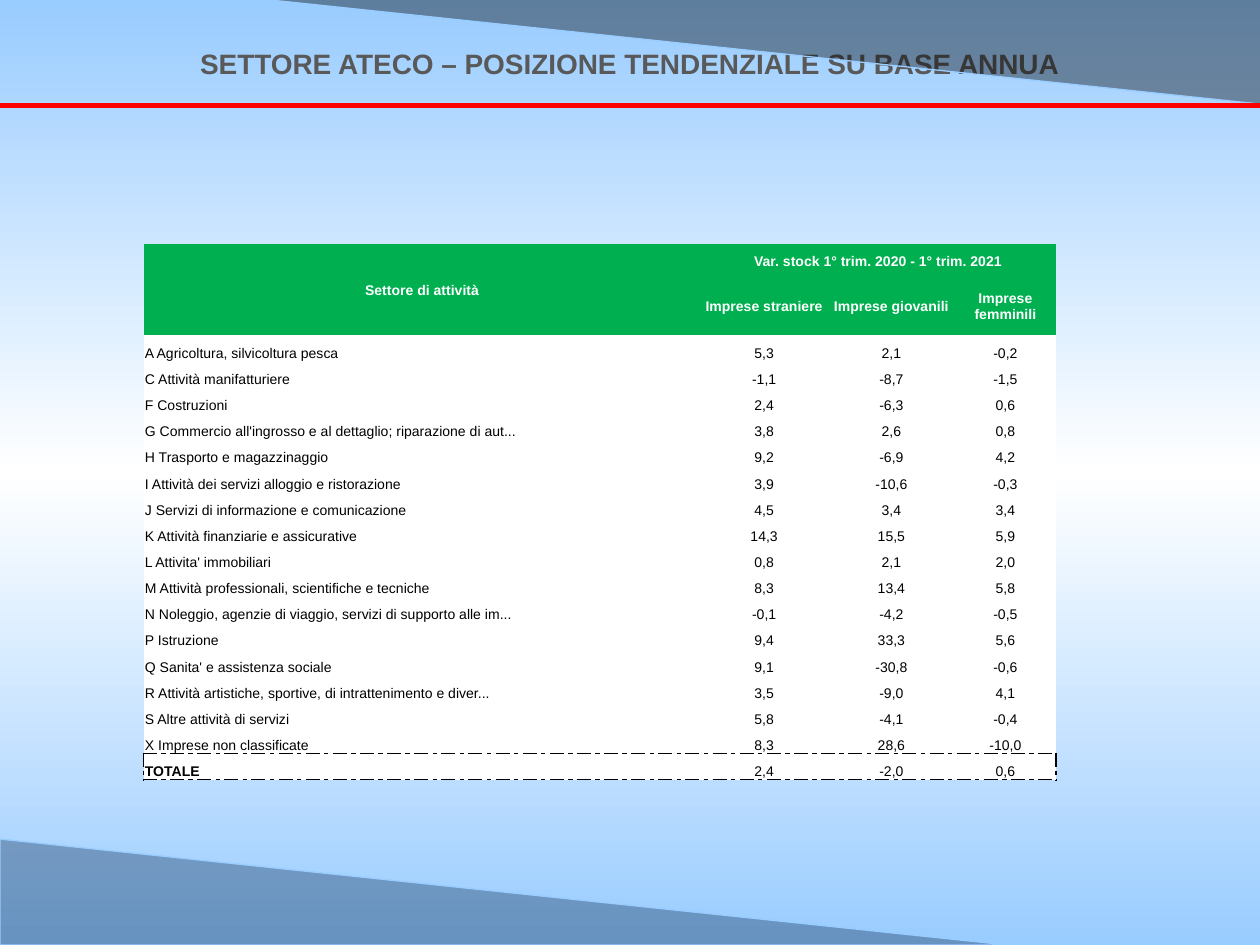
from copy import deepcopy

from lxml.etree import SubElement
from pptx import Presentation
from pptx.dml.color import RGBColor
from pptx.enum.shapes import MSO_CONNECTOR, MSO_SHAPE
from pptx.enum.text import MSO_ANCHOR, PP_ALIGN
from pptx.oxml.ns import qn
from pptx.util import Inches, Pt

COLORS = {
    "sky": "99CCFF", "white": "FFFFFF", "black": "000000", "navy": "17375E",
    "title": "595959", "rule": "FF0000", "header": "00B050",
}
FONT = "Arial"
NO_TABLE_STYLE = "{2D5ABB26-0587-4C30-8999-92F81FD0307C}"
COLUMN_WIDTHS = [4.42, 1.01, 1.01, 0.8]
HEADER_HEIGHTS = [0.26, 0.46]
TABLE_HEIGHT = 4.25
HEADERS = [
    ["Settore di attività", "Var. stock 1° trim. 2020 - 1° trim. 2021", "", ""],
    ["", "Imprese straniere", "Imprese giovanili", "Imprese femminili"],
]
SECTORS = [
    ["A Agricoltura, silvicoltura pesca", "5,3", "2,1", "-0,2"],
    ["C Attività manifatturiere", "-1,1", "-8,7", "-1,5"],
    ["F Costruzioni", "2,4", "-6,3", "0,6"],
    ["G Commercio all'ingrosso e al dettaglio; riparazione di aut...", "3,8", "2,6", "0,8"],
    ["H Trasporto e magazzinaggio", "9,2", "-6,9", "4,2"],
    ["I Attività dei servizi alloggio e ristorazione", "3,9", "-10,6", "-0,3"],
    ["J Servizi di informazione e comunicazione", "4,5", "3,4", "3,4"],
    ["K Attività finanziarie e assicurative", "14,3", "15,5", "5,9"],
    ["L Attivita' immobiliari", "0,8", "2,1", "2,0"],
    ["M Attività professionali, scientifiche e tecniche", "8,3", "13,4", "5,8"],
    ["N Noleggio, agenzie di viaggio, servizi di supporto alle im...", "-0,1", "-4,2", "-0,5"],
    ["P Istruzione", "9,4", "33,3", "5,6"],
    ["Q Sanita' e assistenza sociale", "9,1", "-30,8", "-0,6"],
    ["R Attività artistiche, sportive, di intrattenimento e diver...", "3,5", "-9,0", "4,1"],
    ["S Altre attività di servizi", "5,8", "-4,1", "-0,4"],
    ["X Imprese non classificate", "8,3", "28,6", "-10,0"],
    ["TOTALE", "2,4", "-2,0", "0,6"],
]


def color(name):
    return RGBColor.from_string(COLORS[name])


class SlideBuilder:
    def __init__(self, slide):
        self.slide = slide

    def background(self, names):
        """Vertical gradient with evenly spaced stops."""
        fill = self.slide.background.fill
        fill.gradient()
        fill.gradient_angle = 270
        stop_list = next(self.slide.element.iter(qn("a:gsLst")))
        for _ in names[2:]:
            stop_list.insert(1, deepcopy(stop_list[0]))
        for index, (stop, name) in enumerate(zip(fill.gradient_stops, names)):
            stop.color.rgb = color(name)
            stop.position = index / (len(names) - 1)

    def format_text(self, frame, size, name, bold, alignment):
        paragraph = frame.paragraphs[0]
        paragraph.alignment = alignment
        font = paragraph.font
        font.name, font.size, font.bold = FONT, Pt(size), bold
        font.color.rgb = color(name)

    def title(self, text, left, top, width, height):
        title = self.slide.shapes.title
        title.left, title.top = Inches(left), Inches(top)
        title.width, title.height = Inches(width), Inches(height)
        title.text_frame.text = text
        title.text_frame.vertical_anchor = MSO_ANCHOR.MIDDLE
        self.format_text(title.text_frame, 16, "title", True, PP_ALIGN.CENTER)

    def corner(self, left, top, name, rotation=0):
        """Translucent right triangle in a corner of the slide."""
        shape = self.slide.shapes.add_shape(
            MSO_SHAPE.RIGHT_TRIANGLE, Inches(left), Inches(top), Inches(7.99), Inches(0.84))
        shape.rotation = rotation
        shape.shadow.inherit = False
        shape.fill.solid()
        shape.fill.fore_color.rgb = color(name)
        fill_color = next(shape.element.spPr.iter(qn("a:srgbClr")))
        SubElement(fill_color, qn("a:alpha"), val="38000")
        shape.line.color.rgb = color("sky")
        shape.line.width = Pt(0.75)

    def rule(self, top):
        line = self.slide.shapes.add_connector(
            MSO_CONNECTOR.STRAIGHT, 0, Inches(top), Inches(10), Inches(top))
        line.line.color.rgb = color("rule")
        line.line.width = Pt(3)
        SubElement(line.element.spPr, qn("a:effectLst"))

    def cell(self, cell, text, fill, font_color, bold, alignment, anchor):
        cell.text = text
        cell.margin_left = cell.margin_right = cell.margin_top = Inches(0.01)
        cell.margin_bottom = 0
        cell.vertical_anchor = anchor
        self.format_text(cell.text_frame, 8, font_color, bold, alignment)
        cell.fill.solid()
        cell.fill.fore_color.rgb = color(fill)

    def dashed_borders(self, cell, sides):
        properties = cell._tc.get_or_add_tcPr()
        for index, side in enumerate(sides):
            border = properties.makeelement(qn(f"a:ln{side}"), {"w": str(Pt(1))})
            fill = SubElement(border, qn("a:solidFill"))
            SubElement(fill, qn("a:srgbClr"), val=COLORS["black"])
            SubElement(border, qn("a:prstDash"), val="dashDot")
            properties.insert(index, border)

    def table(self, left, top):
        rows = HEADERS + SECTORS
        frame = self.slide.shapes.add_table(
            len(rows), len(COLUMN_WIDTHS), Inches(left), Inches(top),
            Inches(sum(COLUMN_WIDTHS)), Inches(TABLE_HEIGHT))
        table = frame.table
        table.first_row = table.horz_banding = False
        next(frame.element.iter(qn("a:tableStyleId"))).text = NO_TABLE_STYLE
        for column, width in zip(table.columns, COLUMN_WIDTHS):
            column.width = Inches(width)
        row_height = (TABLE_HEIGHT - sum(HEADER_HEIGHTS)) / len(SECTORS)
        heights = HEADER_HEIGHTS + [row_height] * len(SECTORS)
        last_row, last_column = len(rows) - 1, len(COLUMN_WIDTHS) - 1

        for row, (texts, height) in enumerate(zip(rows, heights)):
            table.rows[row].height = Inches(height)
            for column, text in enumerate(texts):
                cell = table.cell(row, column)
                if row < len(HEADERS):
                    self.cell(cell, text, "header", "white", True,
                              PP_ALIGN.CENTER, MSO_ANCHOR.MIDDLE)
                else:
                    alignment = PP_ALIGN.CENTER if column else PP_ALIGN.LEFT
                    self.cell(cell, text, "white", "black", text == "TOTALE",
                              alignment, MSO_ANCHOR.BOTTOM)
                if row == last_row - 1:
                    self.dashed_borders(cell, "B")
                elif row == last_row:
                    outer = {0: "L", last_column: "R"}.get(column, "")
                    self.dashed_borders(cell, outer + "TB")
        table.cell(0, 0).merge(table.cell(1, 0))
        table.cell(0, 1).merge(table.cell(0, last_column))


def main():
    presentation = Presentation()
    presentation.slide_width, presentation.slide_height = Inches(10), Inches(7.5)
    builder = SlideBuilder(presentation.slides.add_slide(presentation.slide_layouts[5]))
    builder.background(["sky", "white", "sky"])
    builder.title("SETTORE ATECO – POSIZIONE TENDENZIALE SU BASE ANNUA", 0, 0.21, 10, 0.58)
    builder.corner(2.05, -0.01, "black", rotation=180)
    builder.rule(0.84)
    builder.corner(0, 6.66, "navy")
    builder.table(1.14, 1.94)
    presentation.save("out.pptx")


if __name__ == "__main__":
    main()
